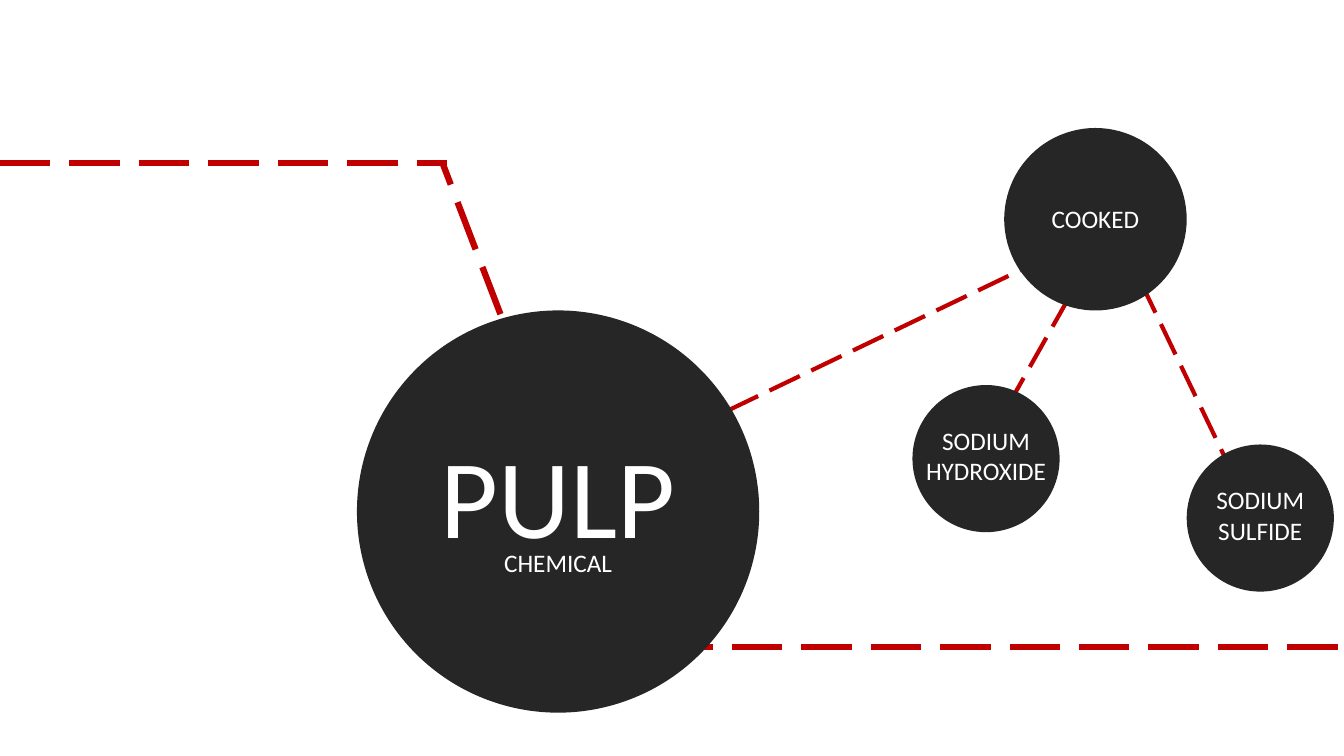
from pptx import Presentation
from pptx.dml.color import RGBColor
from pptx.enum.dml import MSO_LINE
from pptx.enum.shapes import MSO_CONNECTOR, MSO_SHAPE
from pptx.enum.text import MSO_AUTO_SIZE, PP_ALIGN
from pptx.oxml.ns import qn
from pptx.util import Inches, Pt

RED = RGBColor(0xC0, 0x00, 0x00)
CHARCOAL = RGBColor(0x26, 0x26, 0x26)
WHITE = RGBColor(0xFF, 0xFF, 0xFF)
FONT = "Calibri"
SLIDE_WIDTH, SLIDE_HEIGHT = 13.33, 7.5
TRACK, BRANCH = 4.5, 3

DASHED_LINES = [
    ((6.57, 6.42), (SLIDE_WIDTH, 6.42), TRACK),
    ((10.83, 2.34), (7.1, 4.13), BRANCH),
    ((10.72, 1.56), (12.51, 5.29), BRANCH),
    ((11.28, 1.75), (9.78, 4.41), BRANCH),
    ((0, 1.62), (4.43, 1.62), TRACK),
    ((5.21, 3.76), (4.39, 1.62), TRACK),
]

# Each bubble: left, top, diameter, captions (top, height, size, lines)
BUBBLES = [
    (3.54, 3.08, 3.99, [(4.18, 1.45, 80, ["PULP"]), (5.38, 0.4, 18, ["CHEMICAL"])]),
    (9.96, 1.27, 1.81, [(1.97, 0.4, 18, ["COOKED"])]),
    (9.05, 3.82, 1.46, [(4.17, 0.71, 18, ["SODIUM", "HYDROXIDE"])]),
    (11.77, 4.41, 1.46, [(4.76, 0.71, 18, ["SODIUM", "SULFIDE"])]),
]


def add_dashed_line(slide, start, end, weight):
    points = [Inches(value) for value in (*start, *end)]
    connector = slide.shapes.add_connector(MSO_CONNECTOR.STRAIGHT, *points)
    connector.line.color.rgb = RED
    connector.line.width = Pt(weight)
    connector.line.dash_style = MSO_LINE.LONG_DASH
    properties = connector._element.spPr
    properties.append(properties.makeelement(qn("a:effectLst"), {}))


def add_circle(slide, left, top, diameter):
    box = [Inches(value) for value in (left, top, diameter, diameter)]
    shape = slide.shapes.add_shape(MSO_SHAPE.OVAL, *box)
    shape.shadow.inherit = False
    shape.fill.solid()
    shape.fill.fore_color.rgb = CHARCOAL
    shape.line.fill.background()


def add_caption(slide, left, width, top, height, size, lines):
    box = [Inches(value) for value in (left, top, width, height)]
    text_frame = slide.shapes.add_textbox(*box).text_frame
    text_frame.word_wrap = True
    text_frame.auto_size = MSO_AUTO_SIZE.SHAPE_TO_FIT_TEXT
    for index, line in enumerate(lines):
        paragraph = text_frame.add_paragraph() if index else text_frame.paragraphs[0]
        paragraph.alignment = PP_ALIGN.CENTER
        run = paragraph.add_run()
        run.text = line
        run.font.name = FONT
        run.font.size = Pt(size)
        run.font.color.rgb = WHITE


def main():
    presentation = Presentation()
    presentation.slide_width = Inches(SLIDE_WIDTH)
    presentation.slide_height = Inches(SLIDE_HEIGHT)
    slide = presentation.slides.add_slide(presentation.slide_layouts[6])
    for start, end, weight in DASHED_LINES:
        add_dashed_line(slide, start, end, weight)
    for left, top, diameter, captions in BUBBLES:
        add_circle(slide, left, top, diameter)
        for caption in captions:
            add_caption(slide, left, diameter, *caption)
    presentation.save("out.pptx")


if __name__ == "__main__":
    main()
